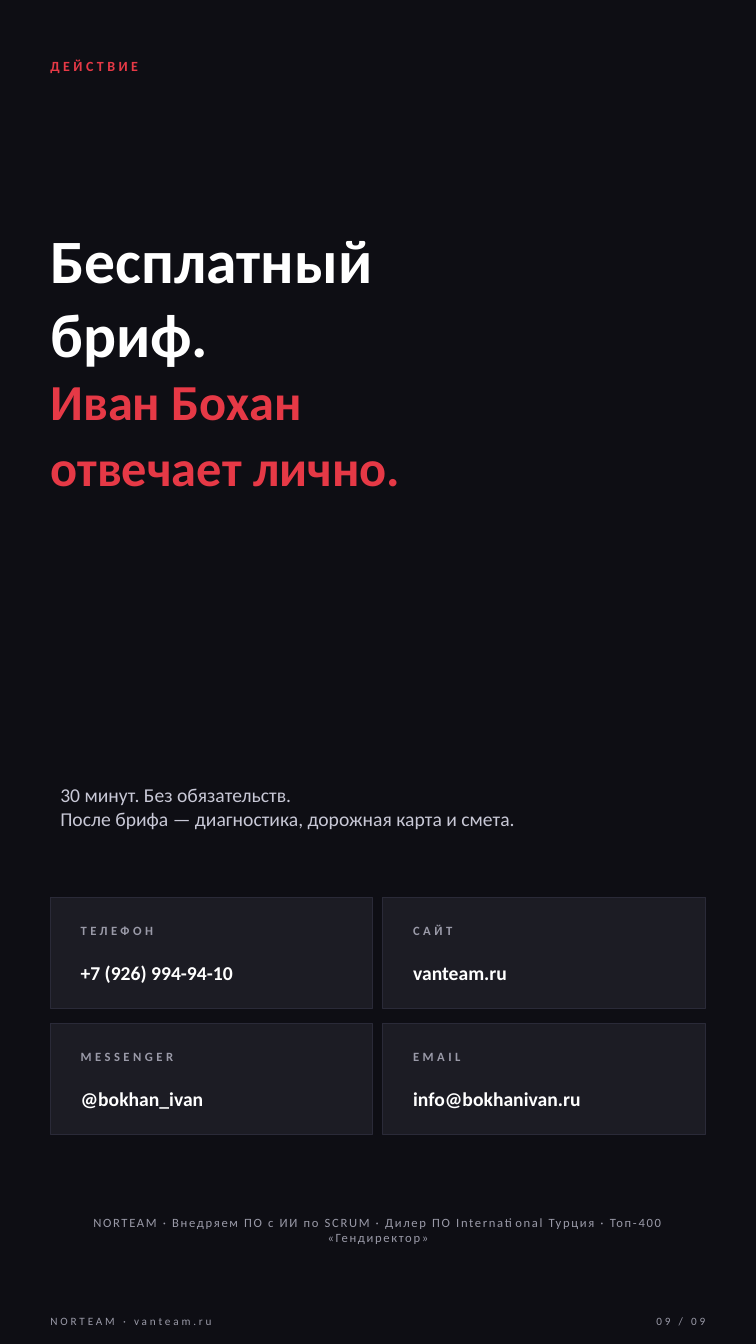
from pptx import Presentation
from pptx.dml.color import RGBColor
from pptx.enum.shapes import MSO_SHAPE
from pptx.enum.text import MSO_ANCHOR, MSO_AUTO_SIZE, PP_ALIGN
from pptx.util import Cm, Pt

RECTANGLE = MSO_SHAPE.RECTANGLE
TOP, MIDDLE = MSO_ANCHOR.TOP, MSO_ANCHOR.MIDDLE
LEFT, CENTER, RIGHT = PP_ALIGN.LEFT, PP_ALIGN.CENTER, PP_ALIGN.RIGHT
NO_AUTOFIT = MSO_AUTO_SIZE.NONE

BACKGROUND = RGBColor(0x0E, 0x0E, 0x14)
CARD_FILL = RGBColor(0x1C, 0x1C, 0x24)
CARD_LINE = RGBColor(0x2A, 0x2A, 0x38)
RED = RGBColor(0xE6, 0x39, 0x46)
WHITE = RGBColor(0xFF, 0xFF, 0xFF)
PALE = RGBColor(0xC8, 0xC8, 0xD6)
GREY = RGBColor(0x9A, 0x9A, 0xA8)

FONT = "Calibri"
MARGIN = Cm(1.27)
CONTENT_WIDTH = Cm(16.51)
CONTACTS = [
    ("ТЕЛЕФОН", "+7 (926) 994-94-10"),
    ("САЙТ", "vanteam.ru"),
    ("MESSENGER", "@bokhan_ivan"),
    ("EMAIL", "info@bokhanivan.ru"),
]


def format_run(run, size, color, bold=False, spacing=0):
    """Style a run; spacing is the letter spacing in points."""
    run.font.name = FONT
    run.font.size = Pt(size)
    run.font.bold = bold
    run.font.color.rgb = color
    if spacing:
        run._r.get_or_add_rPr().set("spc", str(round(spacing * 100)))


def prepare_frame(frame, anchor, inset):
    frame.word_wrap = True
    frame.auto_size = NO_AUTOFIT
    frame.vertical_anchor = anchor
    if not inset:
        frame.margin_left = frame.margin_right = 0
        frame.margin_top = frame.margin_bottom = 0


def add_text(slide, box, text, size, color, bold=False, spacing=0,
             align=LEFT, inset=True):
    frame = slide.shapes.add_textbox(*box).text_frame
    prepare_frame(frame, MIDDLE, inset)
    frame.text = text
    for paragraph in frame.paragraphs:
        paragraph.alignment = align
        for run in paragraph.runs:
            format_run(run, size, color, bold, spacing)


def place_title(slide, box):
    title = slide.shapes.title
    title.left, title.top, title.width, title.height = box
    frame = title.text_frame
    prepare_frame(frame, TOP, inset=False)
    frame.text = "Бесплатный\vбриф.\vИван Бохан\nотвечает лично."
    for paragraph in frame.paragraphs:
        paragraph.alignment = LEFT
        paragraph.space_after = Pt(4)
    offer, answer = frame.paragraphs
    for run in offer.runs[:2]:
        format_run(run, 44, WHITE, bold=True)
    for run in (offer.runs[2], answer.runs[0]):
        format_run(run, 36, RED, bold=True)


def add_contact_card(slide, box, label, value):
    left, top, width, height = box
    card = slide.shapes.add_shape(RECTANGLE, *box)
    card.shadow.inherit = False
    card.fill.solid()
    card.fill.fore_color.rgb = CARD_FILL
    card.line.color.rgb = CARD_LINE
    card.line.width = Pt(0.75)
    padding = Cm(0.51)
    text_left, text_width = left + padding, width - 2 * padding
    add_text(slide, (text_left, top + padding, text_width, Cm(0.64)),
             label, 9, GREY, bold=True, spacing=2.5)
    add_text(slide, (text_left, top + Cm(1.27), text_width, Cm(1.27)),
             value, 14, WHITE, bold=True)


def add_contact_grid(slide, box):
    left, top, width, height = box
    column_gap, row_gap = Cm(0.25), Cm(0.38)
    card_width = (width - column_gap) // 2
    card_height = (height - row_gap) // 2
    for index, (label, value) in enumerate(CONTACTS):
        row, column = divmod(index, 2)
        card_box = (left + column * (card_width + column_gap),
                    top + row * (card_height + row_gap),
                    card_width, card_height)
        add_contact_card(slide, card_box, label, value)


def add_footer(slide, box):
    left, top, width, height = box
    number_width = Cm(2.79)
    add_text(slide, (left, top, Cm(11.43), height), "NORTEAM · vanteam.ru",
             8, GREY, spacing=2, inset=False)
    add_text(slide, (left + width - number_width, top, number_width, height),
             "09 / 09", 8, GREY, spacing=2, align=RIGHT, inset=False)


def build_action_slide(presentation):
    slide = presentation.slides.add_slide(presentation.slide_layouts[5])
    slide.background.fill.solid()
    slide.background.fill.fore_color.rgb = BACKGROUND

    def band(top, height):
        """Return a box of full content width."""
        return MARGIN, Cm(top), CONTENT_WIDTH, Cm(height)

    add_text(slide, band(1.27, 0.76), "ДЕЙСТВИЕ", 10, RED,
             bold=True, spacing=2.5, inset=False)
    place_title(slide, band(5.59, 6.6))
    add_text(slide, band(18.8, 3.05),
             "30 минут. Без обязательств.\n"
             "После брифа — диагностика, дорожная карта и смета.", 14, PALE)
    add_contact_grid(slide, band(22.61, 5.97))
    add_text(slide, band(30.35, 1.27),
             "NORTEAM · Внедряем ПО с ИИ по SCRUM · "
             "Дилер ПО International Турция · Топ-400 «Гендиректор»",
             9, GREY, spacing=1.2, align=CENTER)
    add_footer(slide, band(32.97, 0.64))


def main():
    presentation = Presentation()
    presentation.slide_width = Cm(19.05)
    presentation.slide_height = Cm(33.86)
    build_action_slide(presentation)
    presentation.save("out.pptx")


if __name__ == "__main__":
    main()
